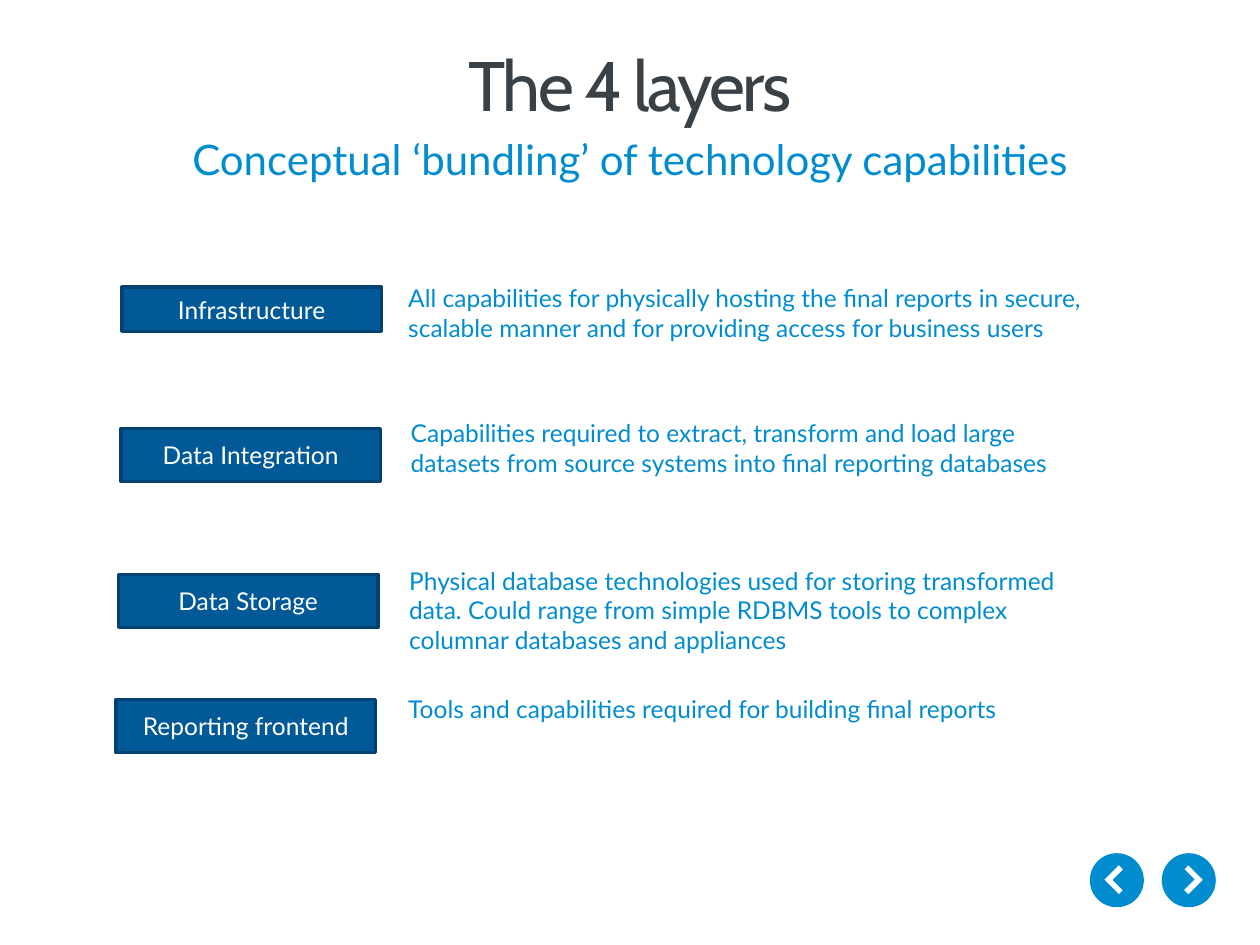
from pptx import Presentation
from pptx.dml.color import RGBColor
from pptx.enum.shapes import MSO_SHAPE
from pptx.enum.text import MSO_ANCHOR, PP_ALIGN
from pptx.util import Cm, Pt

RECT, OVAL, CORNER = MSO_SHAPE.RECTANGLE, MSO_SHAPE.OVAL, MSO_SHAPE.CORNER
LEFT, CENTER = PP_ALIGN.LEFT, PP_ALIGN.CENTER
TOP, MIDDLE = MSO_ANCHOR.TOP, MSO_ANCHOR.MIDDLE

COLORS = {
    "blue": "018CCF",
    "navy": "015998",
    "edge": "014270",
    "dark": "394147",
    "white": "FFFFFF",
}

# Label, its left, top and height; description, its left, top and height (cm)
LAYERS = [
    ("Infrastructure", 2.46, 5.79, 0.89,
     "All capabilities for physically hosting the final reports in secure, "
     "scalable manner and for providing access for business users",
     7.98, 5.59, 2.64),
    ("Data Integration", 2.44, 8.64, 1.07,
     "Capabilities required to extract, transform and load large datasets "
     "from source systems into final reporting databases",
     8.03, 8.31, 2.64),
    ("Data Storage", 2.39, 11.58, 1.07,
     "Physical database technologies used for storing transformed data. "
     "Could range from simple RDBMS tools to complex columnar databases "
     "and appliances",
     8, 11.28, 2.64),
    ("Reporting frontend", 2.34, 14.1, 1.07,
     "Tools and capabilities required for building final reports",
     7.98, 13.87, 2.06),
]
LABEL_W, NOTE_W = 5.23, 14.2

# Button left, arrow left, arrow turn
BUTTONS = [(23.42, 23.75, 225), (21.97, 22.35, 45)]


def color(name):
    return RGBColor.from_string(COLORS[name])


def write(shape, text, size=14, font="Lato", ink="blue", align=LEFT,
          anchor=TOP, track=None):
    frame = shape.text_frame
    frame.word_wrap = True
    frame.vertical_anchor = anchor
    para = frame.paragraphs[0]
    para.alignment = align
    run = para.add_run()
    run.text = text
    run.font.name = font
    run.font.size = Pt(size)
    run.font.color.rgb = color(ink)
    if track is not None:
        run._r.get_or_add_rPr().set("spc", str(int(track * 100)))


def add_text(slide, box, text, **style):
    shape = slide.shapes.add_textbox(*map(Cm, box))
    write(shape, text, **style)


def add_shape(shapes, kind, box, fill, edge=None):
    shape = shapes.add_shape(kind, *map(Cm, box))
    shape.shadow.inherit = False
    shape.fill.solid()
    shape.fill.fore_color.rgb = color(fill)
    if edge:
        shape.line.color.rgb = color(edge)
        shape.line.width = Pt(2)
    else:
        shape.line.fill.background()
    return shape


def add_button(slide, left, tip, turn):
    group = slide.shapes.add_group_shape()
    add_shape(group.shapes, OVAL, (left, 17.2, 1.09, 1.09), "blue")
    arrow = add_shape(group.shapes, CORNER, (tip, 17.53, 0.41, 0.41), "white")
    arrow.adjustments[0] = 0.26
    arrow.adjustments[1] = 0.29
    arrow.rotation = turn


def main():
    deck = Presentation()
    deck.slide_width, deck.slide_height = Cm(25.4), Cm(19.05)
    slide = deck.slides.add_slide(deck.slide_layouts[6])

    # Navigation buttons
    for button in BUTTONS:
        add_button(slide, *button)

    # Heading
    add_text(slide, (1.27, 0.84, 22.86, 1.7), "The 4 layers", size=40,
             font="Cabin", ink="dark", align=CENTER, anchor=MIDDLE, track=-1.5)
    add_text(slide, (1.27, 2.57, 22.86, 1.3),
             "Conceptual ‘bundling’ of technology capabilities",
             size=24, align=CENTER)

    # Layers with their descriptions
    for label, x, y, high, note, note_x, note_y, note_h in LAYERS:
        tile = add_shape(slide.shapes, RECT, (x, y, LABEL_W, high),
                         "navy", "edge")
        write(tile, label, ink="white", align=CENTER, anchor=MIDDLE)
        add_text(slide, (note_x, note_y, NOTE_W, note_h), note)

    deck.save("out.pptx")


if __name__ == "__main__":
    main()
